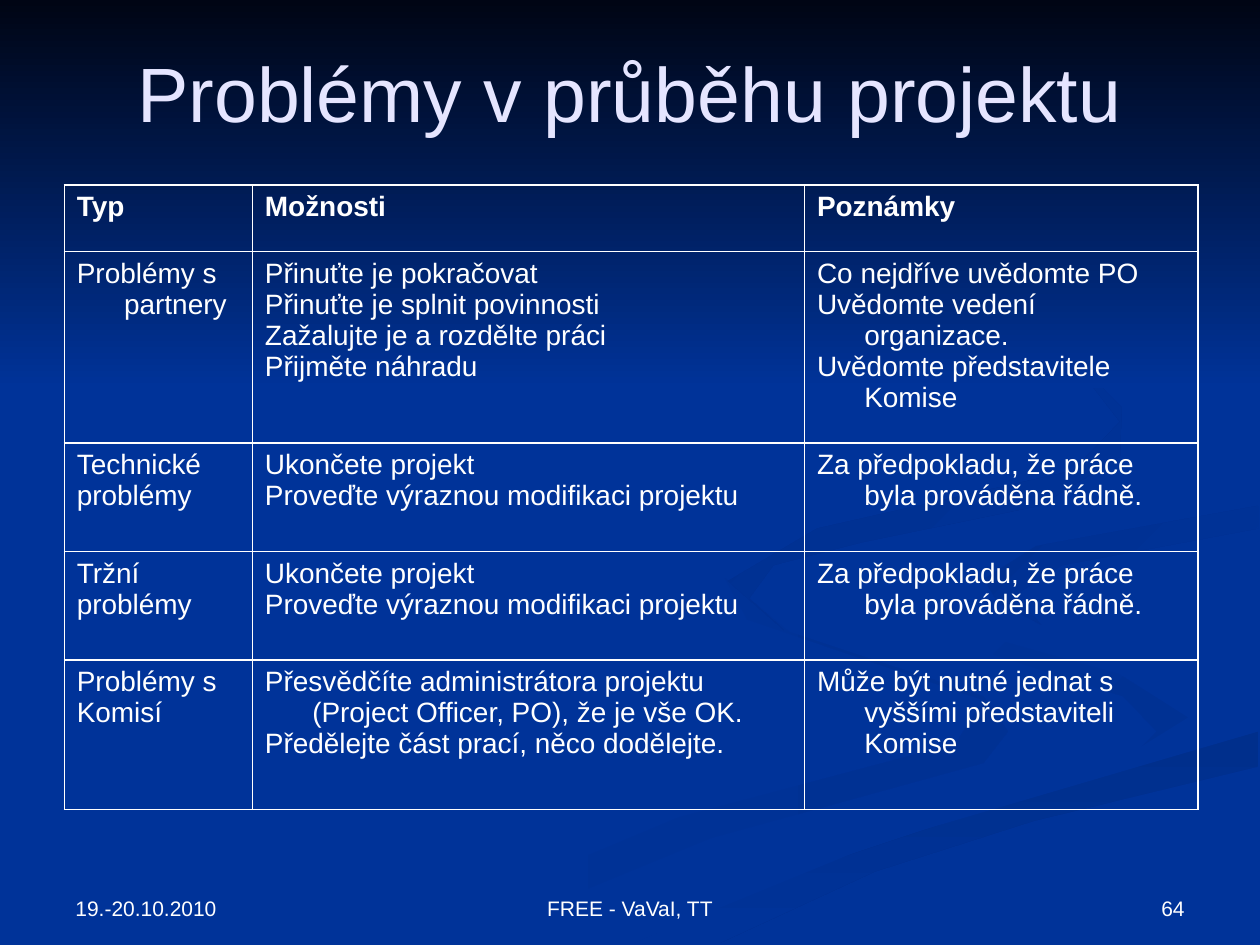
from lxml import etree
from pptx import Presentation
from pptx.dml.color import RGBColor
from pptx.enum.text import MSO_ANCHOR, PP_ALIGN
from pptx.oxml.ns import qn
from pptx.util import Pt

LEFT, CENTER, RIGHT = PP_ALIGN.LEFT, PP_ALIGN.CENTER, PP_ALIGN.RIGHT
MIDDLE, BOTTOM = MSO_ANCHOR.MIDDLE, MSO_ANCHOR.BOTTOM

W, H = 720, 540
FONT = "Arial"
BLUE, WHITE, LILAC = "003399", "FFFFFF", "E5E5FF"

# Text, box (left, top, width, height), format
TEXTS = [
    ("19.-20.10.2010", (36, 492, 168, 37.5), dict(anchor=BOTTOM)),
    ("64", (516, 492, 168, 37.5), dict(anchor=BOTTOM, align=RIGHT)),
    ("FREE - VaVaI, TT", (246, 492, 228, 37.5), dict(anchor=BOTTOM, align=CENTER)),
    ("Problémy v průběhu projektu", (36, 21.6, 648, 61.2),
     dict(anchor=MIDDLE, align=CENTER, size=44, color=LILAC)),
]

# Table: each cell is a list of paragraphs
TABLE_LEFT, TABLE_TOP = 36.75, 105.75
COLS = [107.5, 315.5, 225]
ROWS = [38, 109.5, 62, 62, 85.5]
REMEDY = ["Ukončete projekt", "Proveďte výraznou modifikaci projektu"]
CONDITION = ["Za předpokladu, že práce byla prováděna řádně."]
CELLS = [
    [["Typ"], ["Možnosti"], ["Poznámky"]],
    [["Problémy s partnery"],
     ["Přinuťte je pokračovat", "Přinuťte je splnit povinnosti",
      "Zažalujte je a rozdělte práci", "Přijměte náhradu"],
     ["Co nejdříve uvědomte PO", "Uvědomte vedení organizace.",
      "Uvědomte představitele Komise"]],
    [["Technické", "problémy"], REMEDY, CONDITION],
    [["Tržní", "problémy"], REMEDY, CONDITION],
    [["Problémy s", "Komisí"],
     ["Přesvědčíte administrátora projektu (Project Officer, PO), že je vše OK.",
      "Předělejte část prací, něco dodělejte."],
     ["Může být nutné jednat s vyššími představiteli Komise"]],
]

# Background ribbons: start colour, end colour, clockwise angle, outline
RIBBONS = [
    (BLUE, "003193", 0, [
        (562, 398), (451, 361), (414, 330), (427, 354), (562, 400), (546, 425),
        (388, 467), (216, 539), (260, 539), (406, 479), (562, 436), (576, 418)]),
    (BLUE, "003193", 45, [
        (679, 410), (639, 385), (557, 362), (521, 334), (552, 369), (642, 398),
        (661, 418), (644, 436), (671, 424)]),
    ("002F8C", BLUE, 90, [
        (362, 539), (411, 539), (500, 498), (591, 469), (719, 438), (719, 418),
        (574, 459), (454, 499)]),
    (BLUE, BLUE, 0, [
        (522, 334), (558, 362), (640, 385), (679, 410), (634, 438), (477, 481),
        (343, 539), (362, 539), (501, 482), (719, 418), (719, 387), (611, 362),
        (562, 333), (623, 305), (719, 289), (719, 279), (554, 307)]),
    ("003091", BLUE, 45, [
        (562, 331), (570, 344), (595, 357), (580, 340), (607, 323), (719, 302),
        (719, 289), (592, 312)]),
    ("002F8E", BLUE, 45, [
        (492, 310), (594, 289), (640, 261), (641, 233), (607, 198), (549, 168),
        (609, 201), (640, 241), (613, 269), (467, 302), (416, 332), (448, 360),
        (428, 342), (442, 323)]),
    ("000514", BLUE, 90, [(0, 0), (0, 222), (W, 222), (W, 0)]),
]


def rgb(color):
    return RGBColor.from_string(color)


def write(tf, paragraphs, size=12, color=WHITE, bold=False, align=LEFT, hanging=0):
    tf.word_wrap = True
    for i, text in enumerate(paragraphs):
        p = tf.paragraphs[0] if i == 0 else tf.add_paragraph()
        p.alignment = align
        if hanging:
            pPr = p._p.get_or_add_pPr()
            pPr.set("marL", str(Pt(hanging)))
            pPr.set("indent", str(-Pt(hanging)))
        r = p.add_run()
        r.text = text
        r.font.name, r.font.size, r.font.bold = FONT, Pt(size), bold
        r.font.color.rgb = rgb(color)


def add_ribbon(shapes, start, end, angle, points):
    builder = shapes.build_freeform(*points[0], scale=Pt(1))
    builder.add_line_segments(points[1:], close=True)
    sp = builder.convert_to_shape()
    sp.shadow.inherit = False
    sp.line.fill.background()
    if start == end:
        sp.fill.solid()
        sp.fill.fore_color.rgb = rgb(start)
        return
    sp.fill.gradient()
    sp.fill.gradient_angle = -angle % 360
    for stop, color in zip(sp.fill.gradient_stops, (start, end)):
        stop.color.rgb = rgb(color)


def add_borders(cell, color, width):
    tcPr = cell._tc.get_or_add_tcPr()
    for i, side in enumerate(("lnL", "lnR", "lnT", "lnB")):
        ln = etree.Element(qn("a:" + side), w=str(Pt(width)))
        fill = etree.SubElement(ln, qn("a:solidFill"))
        etree.SubElement(fill, qn("a:srgbClr"), val=color)
        tcPr.insert(i, ln)


prs = Presentation()
prs.slide_width, prs.slide_height = Pt(W), Pt(H)
s = prs.slides.add_slide(prs.slide_layouts[6])

# Background
s.background.fill.solid()
s.background.fill.fore_color.rgb = rgb(BLUE)
for ribbon in RIBBONS:
    add_ribbon(s.shapes, *ribbon)

# Title and footer
for text, box, style in TEXTS:
    tf = s.shapes.add_textbox(*map(Pt, box)).text_frame
    tf.vertical_anchor = style.pop("anchor")
    write(tf, [text], **style)

# Table
frame = s.shapes.add_table(len(ROWS), len(COLS), Pt(TABLE_LEFT), Pt(TABLE_TOP),
                           Pt(sum(COLS)), Pt(sum(ROWS)))
table = frame.table
for column, width in zip(table.columns, COLS):
    column.width = Pt(width)
for i, (row, height) in enumerate(zip(table.rows, ROWS)):
    row.height = Pt(height)
    for cell, paragraphs in zip(row.cells, CELLS[i]):
        cell.fill.background()
        add_borders(cell, WHITE, 1)
        write(cell.text_frame, paragraphs, size=16, bold=i == 0, hanging=27)

prs.save("out.pptx")
